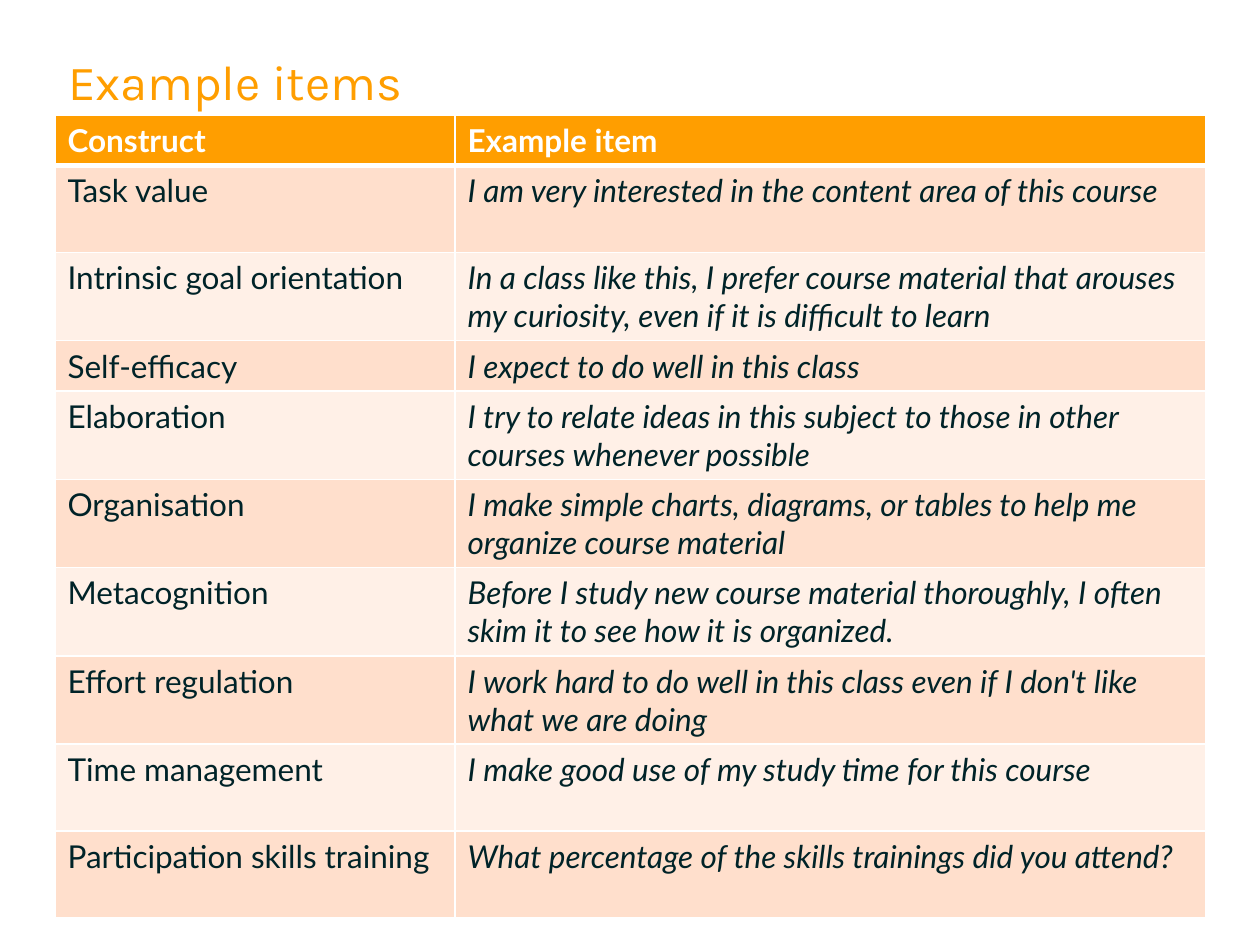
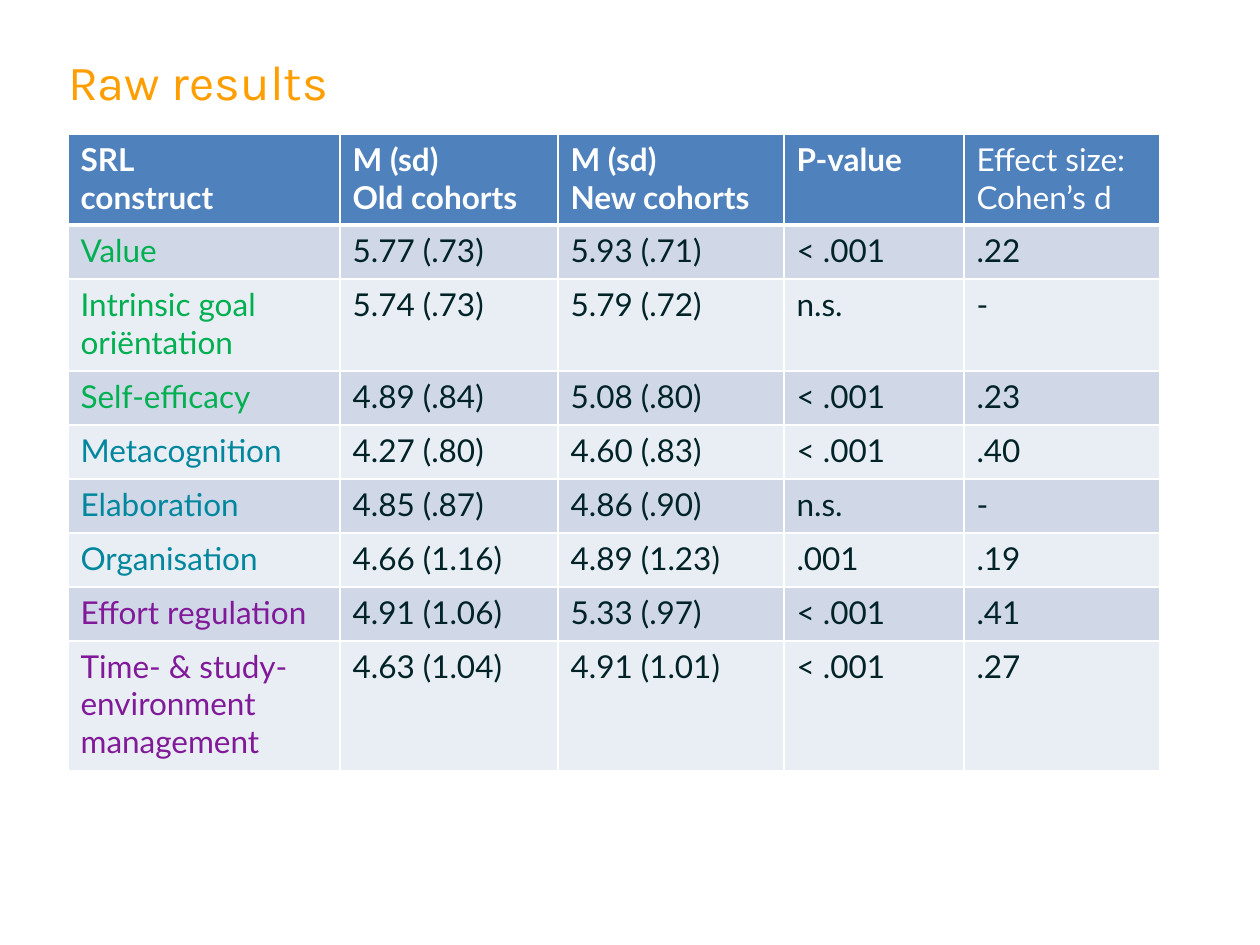
from lxml import etree
from pptx import Presentation
from pptx import util as u
from pptx.dml.color import RGBColor
from pptx.enum import text
from pptx.oxml.ns import qn

PX = u.Inches(1) / 126
WHITE = RGBColor(0xFF, 0xFF, 0xFF)
INK = RGBColor(0x00, 0x23, 0x28)
ORANGE = RGBColor(0xFF, 0x9E, 0x00)
PEACH = RGBColor(0xFF, 0xDF, 0xCC)
PALE_PEACH = RGBColor(0xFF, 0xF0, 0xE7)
BLUE = RGBColor(0x4F, 0x81, 0xBD)
MIST = RGBColor(0xD0, 0xD8, 0xE8)
PALE_MIST = RGBColor(0xE9, 0xED, 0xF4)
GREEN = RGBColor(0x00, 0xB0, 0x50)
TEAL = RGBColor(0x00, 0x87, 0x9E)
PURPLE = RGBColor(0x80, 0x1A, 0x99)

EXAMPLE_ITEMS = [
    ("Construct", "Example item"),
    ("Task value", "I am very interested in the content area of this course"),
    ("Intrinsic goal orientation",
     "In a class like this, I prefer course material that arouses my curiosity, "
     "even if it is difficult to learn"),
    ("Self-efficacy", "I expect to do well in this class"),
    ("Elaboration",
     "I try to relate ideas in this subject to those in other courses whenever possible"),
    ("Organisation",
     "I make simple charts, diagrams, or tables to help me organize course material"),
    ("Metacognition",
     "Before I study new course material thoroughly, I often skim it to see how it "
     "is organized."),
    ("Effort regulation",
     "I work hard to do well in this class even if I don't like what we are doing"),
    ("Time management", "I make good use of my study time for this course"),
    ("Participation skills training",
     "What percentage of the skills trainings did you attend?"),
]
RAW_RESULTS = [
    ("SRL\nconstruct", "M (sd)\nOld cohorts", "M (sd)\nNew cohorts", "P-value",
     "Effect size: Cohen’s d"),
    ("Value", "5.77 (.73)", "5.93 (.71)", "< .001", ".22"),
    ("Intrinsic goal oriëntation", "5.74 (.73)", "5.79 (.72)", "n.s.", "-"),
    ("Self-efficacy", "4.89 (.84)", "5.08 (.80)", "< .001", ".23"),
    ("Metacognition", "4.27 (.80)", "4.60 (.83)", "< .001", ".40"),
    ("Elaboration", "4.85 (.87)", "4.86 (.90)", "n.s.", "-"),
    ("Organisation", "4.66 (1.16)", "4.89 (1.23)", ".001", ".19"),
    ("Effort regulation", "4.91 (1.06)", "5.33 (.97)", "< .001", ".41"),
    ("Time- & study-environment management", "4.63 (1.04)", "4.91 (1.01)", "< .001", ".27"),
]
CONSTRUCT_COLORS = [GREEN] * 3 + [TEAL] * 3 + [PURPLE] * 2


def px(length):
    return u.Emu(round(length * PX))


def write(text_frame, content, font="Lato", size=18, color=INK, bold=False,
          italic=False, line_spacing=None):
    paragraph = text_frame.paragraphs[0]
    paragraph.text = content
    paragraph.alignment = text.PP_ALIGN.LEFT
    paragraph.line_spacing = line_spacing
    for run in paragraph.runs:
        run.font.name = font
        run.font.size = u.Pt(size)
        run.font.color.rgb = color
        run.font.bold = bold
        run.font.italic = italic


def add_titled_slide(presentation, title):
    slide = presentation.slides.add_slide(presentation.slide_layouts[5])
    shape = slide.shapes.title
    shape.left, shape.top, shape.width, shape.height = map(px, (68, 54, 1126, 115))
    frame = shape.text_frame
    frame.margin_left = frame.margin_top = frame.margin_right = frame.margin_bottom = 0
    frame.vertical_anchor = text.MSO_ANCHOR.TOP
    frame.auto_size = text.MSO_AUTO_SIZE.NONE
    frame.word_wrap = True
    write(frame, title, font="Karla", size=28, color=ORANGE, line_spacing=u.Pt(32))
    return slide


def add_borders(cell, **widths):
    """Draw white borders; widths in points are keyed by side: L, R, T, B."""
    properties = cell._tc.get_or_add_tcPr()
    for side, width in widths.items():
        line = etree.SubElement(properties, qn(f"a:ln{side}"), w=str(u.Pt(width)))
        fill = etree.SubElement(line, qn("a:solidFill"))
        etree.SubElement(fill, qn("a:srgbClr"), val=str(WHITE))


def add_banded_table(slide, rows, left, top, widths, heights, fills, cell_format):
    """fills is (header, odd, even); cell_format gives write() options for a cell."""
    header_fill, *band_fills = fills
    table = slide.shapes.add_table(len(rows), len(widths), px(left), px(top),
                                   px(sum(widths)), px(sum(heights))).table
    for column, width in zip(table.columns, widths):
        column.width = px(width)
    for row_index, (row, height) in enumerate(zip(rows, heights)):
        table.rows[row_index].height = px(height)
        is_header = row_index == 0
        for column_index, content in enumerate(row):
            cell = table.cell(row_index, column_index)
            add_borders(cell, L=1, R=1, T=3 if row_index == 1 else 1,
                        B=3 if is_header else 1)
            cell.fill.solid()
            cell.fill.fore_color.rgb = (header_fill if is_header
                                        else band_fills[(row_index - 1) % 2])
            write(cell.text_frame, content, **cell_format(row_index, column_index))


def example_format(row, column):
    if row == 0:
        return {"color": WHITE, "bold": True}
    return {"italic": column == 1}


def result_format(row, column):
    if row == 0:
        return {"color": WHITE, "bold": column < 4}
    return {"color": CONSTRUCT_COLORS[row - 1] if column == 0 else INK}


def main():
    presentation = Presentation()
    presentation.slide_width, presentation.slide_height = px(1260), px(945)

    slide = add_titled_slide(presentation, "Example items")
    add_banded_table(slide, EXAMPLE_ITEMS, 55, 115, [400, 751],
                     [50, 87, 88, 50] + [88] * 4 + [87] * 2,
                     (ORANGE, PEACH, PALE_PEACH), example_format)

    slide = add_titled_slide(presentation, "Raw results")
    add_banded_table(slide, RAW_RESULTS, 68, 134, [272, 218, 226, 180, 196],
                     [91, 54, 92] + [54] * 5 + [130],
                     (BLUE, MIST, PALE_MIST), result_format)

    presentation.save("out.pptx")


if __name__ == "__main__":
    main()
